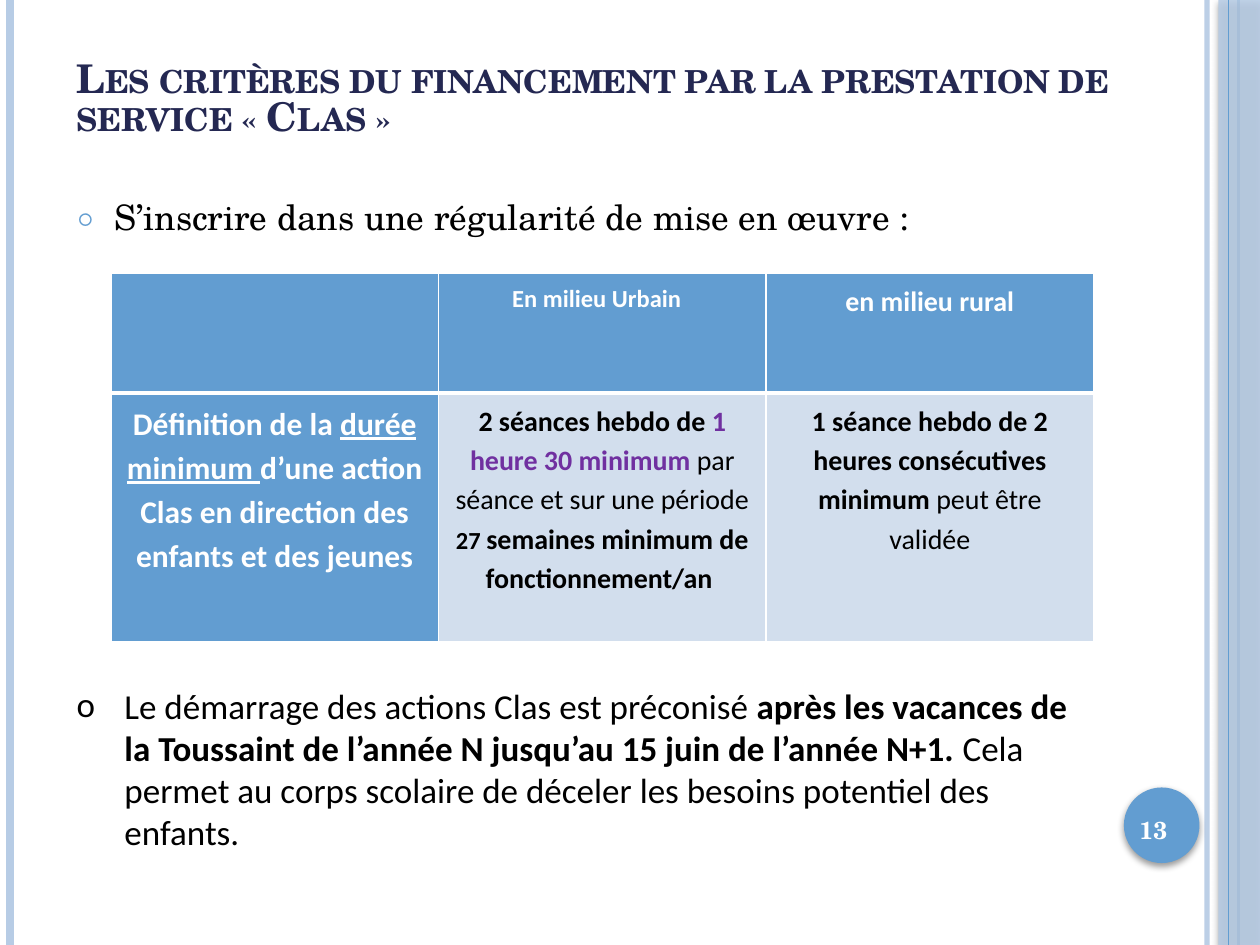
from lxml.etree import SubElement, Element
from pptx import Presentation
from pptx.dml.color import RGBColor
from pptx.enum.shapes import MSO_CONNECTOR, MSO_SHAPE
from pptx.enum.text import MSO_ANCHOR, PP_ALIGN
from pptx.oxml.ns import qn
from pptx.util import Inches, Pt

COLORS = {
    "ink": "000000", "title": "242852", "blue": "629DD1", "pale": "B7CCE5",
    "cell": "D2DEED", "accent": "7030A0", "white": "FFFFFF",
}
SERIF = "TeX Gyre Schola"
SANS = "Calibri"


def apply(target, formats):
    for name, value in formats.items():
        setattr(target, name, value)


def add_xml(parent, tag, **attributes):
    return SubElement(parent, qn(tag), {k: str(v) for k, v in attributes.items()})


class SlideBuilder:
    def __init__(self, slide):
        self.slide = slide

    def color(self, name):
        return RGBColor.from_string(COLORS[name])

    def alpha(self, element, percent):
        for srgb in element.iter(qn("a:srgbClr")):
            add_xml(srgb, "a:alpha", val=percent * 1000)

    def rule(self, x, color, width, opacity=100):
        rule = self.slide.shapes.add_connector(
            MSO_CONNECTOR.STRAIGHT, Inches(x), 0, Inches(x), Inches(7.5))
        rule.line.color.rgb = self.color(color)
        rule.line.width = Pt(width)
        properties = rule._element.spPr
        if opacity < 100:
            self.alpha(properties, opacity)
        add_xml(properties, "a:effectLst")

    def shape(self, kind, box, color, opacity=100):
        shape = self.slide.shapes.add_shape(kind, *map(Inches, box))
        shape.shadow.inherit = False
        shape.fill.solid()
        shape.fill.fore_color.rgb = self.color(color)
        shape.line.fill.background()
        properties = shape._element.spPr
        if opacity < 100:
            self.alpha(properties, opacity)
        shadow = add_xml(properties.find(qn("a:effectLst")), "a:outerShdw",
                         blurRad=Pt(4), dist=Pt(2), dir=5400000, rotWithShape=0)
        tint = add_xml(shadow, "a:srgbClr", val=COLORS["ink"])
        add_xml(tint, "a:alpha", val=40000)

    def text(self, box, anchor):
        frame = self.slide.shapes.add_textbox(*map(Inches, box)).text_frame
        apply(frame, {"word_wrap": True, "vertical_anchor": anchor})
        return frame

    def fill_paragraph(self, paragraph, runs, formats, color="ink", **layout):
        apply(paragraph, layout)
        for words, changes in runs:
            run = paragraph.add_run()
            run.text = words
            settings = {"color": color, **formats, **changes}
            run.font.color.rgb = self.color(settings.pop("color"))
            apply(run.font, settings)

    def bullet(self, paragraph, char, indent, font, color, percent):
        properties = paragraph._p.get_or_add_pPr()
        properties.set("marL", str(Inches(indent)))
        properties.set("indent", str(-Inches(indent)))
        add_xml(add_xml(properties, "a:buClr"), "a:srgbClr", val=COLORS[color])
        add_xml(properties, "a:buSzPct", val=percent * 1000)
        add_xml(properties, "a:buFont", typeface=font)
        add_xml(properties, "a:buChar", char=char)

    def borders(self, cell, widths):
        properties = cell._tc.get_or_add_tcPr()
        for index, (side, width) in enumerate(zip("LRTB", widths)):
            line = Element(qn("a:ln" + side), {"w": str(Pt(width))})
            add_xml(add_xml(line, "a:solidFill"), "a:srgbClr", val=COLORS["white"])
            properties.insert(index, line)

    def table(self, box, row_heights, rows):
        table = self.slide.shapes.add_table(
            len(rows), len(rows[0]), *map(Inches, box)).table
        table.horz_banding = False
        for row, height in zip(table.rows, row_heights):
            row.height = Inches(height)
        for r, contents in enumerate(rows):
            for c, (size, runs) in enumerate(contents):
                cell = table.cell(r, c)
                heading = r == 0 or c == 0
                apply(cell, {"margin_left": Inches(0.07), "margin_right": Inches(0.07)})
                cell.fill.solid()
                cell.fill.fore_color.rgb = self.color("blue" if heading else "cell")
                self.borders(cell, (0.96, 0.96, 0.96, 3) if r == 0 else (0.96, 0.96, 3, 0.96))
                self.fill_paragraph(
                    cell.text_frame.paragraphs[0], runs,
                    {"name": SANS, "size": Pt(size), "bold": True},
                    "white" if heading else "ink",
                    alignment=PP_ALIGN.CENTER, line_spacing=1.15)


def main():
    deck = Presentation()
    apply(deck, {"slide_width": Inches(10), "slide_height": Inches(7.5)})
    builder = SlideBuilder(deck.slides.add_slide(deck.slide_layouts[6]))

    builder.rule(9.58, "pale", 3, 93)
    builder.rule(0.08, "pale", 4.5)
    builder.rule(9.83, "blue", 1.5)
    builder.shape(MSO_SHAPE.RECTANGLE, (9.67, 0, 0.33, 7.5), "pale", 87)
    builder.rule(9.75, "blue", 0.75)
    builder.shape(MSO_SHAPE.OVAL, (8.92, 6.25, 0.6, 0.6), "blue")

    title = builder.text((0.51, 0.44, 8.58, 0.71), MSO_ANCHOR.BOTTOM).paragraphs[0]
    builder.fill_paragraph(
        title,
        [("Les critères du financement par la prestation de service « Clas »", {})],
        {"name": SERIF, "size": Pt(22.6), "bold": True}, "title", line_spacing=0.8)
    title.runs[0]._r.get_or_add_rPr().set("cap", "small")

    body = builder.text((0.51, 1.54, 8.17, 5.33), MSO_ANCHOR.TOP)
    regularity = body.paragraphs[0]
    builder.fill_paragraph(
        regularity, [("S’inscrire dans une régularité de mise en œuvre :", {})],
        {"name": SERIF, "size": Pt(20)}, line_spacing=0.9, space_before=Pt(6))
    builder.bullet(regularity, "○", 0.3, SERIF, "blue", 70)

    start = body.add_paragraph()
    builder.fill_paragraph(start, [
        ("Le démarrage des actions Clas est préconisé ", {}),
        ("après les vacances de la Toussaint de l’année N jusqu’au 15 juin "
         "de l’année N+1. ", {"bold": True}),
        ("Cela permet au corps scolaire de déceler les besoins potentiel des enfants.", {}),
    ], {"name": SANS, "size": Pt(20)}, space_before=Pt(255))
    builder.bullet(start, "o", 0.38, SANS, "ink", 100)

    plain = {"bold": False}
    builder.table((0.88, 2.17, 7.8, 2.92), (0.95, 1.97), [
        [
            (18, []),
            (14, [("En milieu Urbain  ", {})]),
            (16, [("en milieu rural", {})]),
        ],
        [
            (18, [("Définition de la ", {}),
                  ("durée minimum ", {"underline": True}),
                  ("d’une action Clas en direction des enfants et des jeunes", {})]),
            (16, [("2 séances hebdo de ", {}),
                  ("1 heure 30 minimum ", {"color": "accent"}),
                  ("par séance et sur une période ", plain),
                  ("27 ", {"size": Pt(14)}),
                  ("semaines minimum de fonctionnement/an ", {})]),
            (16, [("1 séance hebdo de 2 heures consécutives minimum", {}),
                  (" peut être validée", plain)]),
        ],
    ])

    number = builder.text((8.82, 6.3, 0.67, 0.57), MSO_ANCHOR.MIDDLE).paragraphs[0]
    builder.fill_paragraph(number, [("13", {})],
                           {"name": SERIF, "size": Pt(14), "bold": True}, "white",
                           alignment=PP_ALIGN.CENTER)

    deck.save("out.pptx")


if __name__ == "__main__":
    main()
